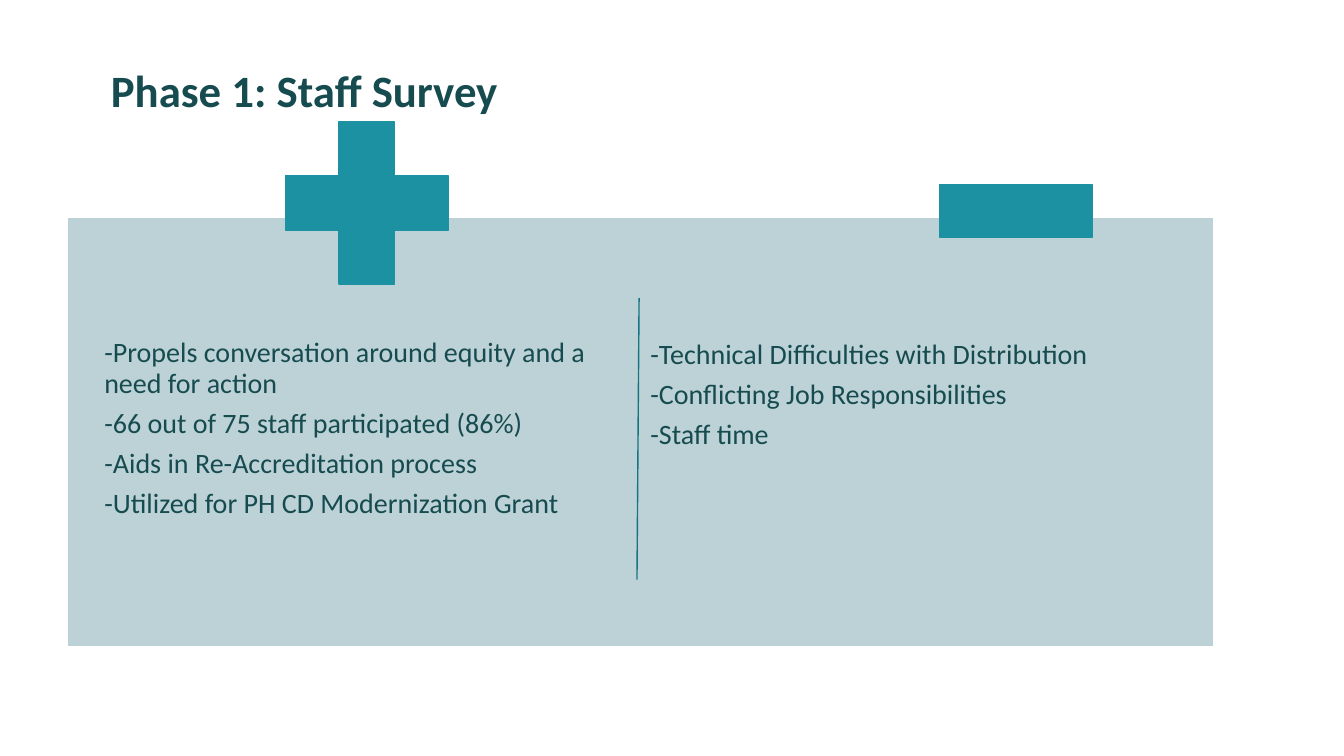
"""Build the staff survey slide weighing positives against negatives."""
import pptx
import pptx.dml.color
import pptx.enum.shapes
import pptx.enum.text
import pptx.oxml
import pptx.oxml.ns
import pptx.util

Pt = pptx.util.Pt
RGBColor = pptx.dml.color.RGBColor
Shape = pptx.enum.shapes.MSO_SHAPE
Text = pptx.enum.text

COLORS = {
    "text": "164B4F",
    "panel": "BDD2D7",
    "panel line": "FFFFFF",
    "sign": "1B91A1",
    "divider": "167481",
}
POSITIVES = [
    "-Propels conversation around equity and a need for action",
    "-66 out of 75 staff participated (86%)",
    "-Aids in Re-Accreditation process",
    "-Utilized for PH CD Modernization Grant",
]
NEGATIVES = [
    "-Technical Difficulties with Distribution",
    "-Conflicting Job Responsibilities",
    "-Staff time",
]


def place(shape, left, top, width, height):
    box = {"left": left, "top": top, "width": width, "height": height}
    for name, value in box.items():
        setattr(shape, name, Pt(value))


def format_text(paragraph, size, bold, space_after):
    paragraph_format = {
        "alignment": Text.PP_ALIGN.LEFT,
        "line_spacing": 0.9,
        "space_before": Pt(0),
        "space_after": Pt(space_after),
    }
    for name, value in paragraph_format.items():
        setattr(paragraph, name, value)
    font_format = {"name": "Calibri", "size": Pt(size), "bold": bold}
    for run in paragraph.runs:
        for name, value in font_format.items():
            setattr(run.font, name, value)
        run.font.color.rgb = RGBColor.from_string(COLORS["text"])


presentation = pptx.Presentation()
presentation.slide_width = Pt(960)
presentation.slide_height = Pt(540)
slide = presentation.slides.add_slide(presentation.slide_layouts[3])
for placeholder in list(slide.placeholders):
    if placeholder.placeholder_format.idx > 2:
        placeholder.element.getparent().remove(placeholder.element)

title = slide.shapes.title
place(title, 72, 3, 690, 84)
title.text_frame.text = "Phase 1: Staff Survey"
title.text_frame.vertical_anchor = Text.MSO_ANCHOR.BOTTOM
title.text_frame.auto_size = Text.MSO_AUTO_SIZE.NONE
format_text(title.text_frame.paragraphs[0], 32, True, 0)

columns = [
    (1, POSITIVES, (71.5, 239, 370, 193)),
    (2, NEGATIVES, (461.5, 239.8, 396, 203)),
]
frame_format = {
    "margin_left": Pt(3),
    "margin_right": Pt(3),
    "margin_top": Pt(3),
    "margin_bottom": Pt(3),
    "vertical_anchor": Text.MSO_ANCHOR.TOP,
    "word_wrap": True,
    "auto_size": Text.MSO_AUTO_SIZE.NONE,
}
for index, lines, box in columns:
    body = slide.placeholders[index]
    place(body, *box)
    frame = body.text_frame
    for name, value in frame_format.items():
        setattr(frame, name, value)
    frame.text = "\n".join(lines)
    for paragraph in frame.paragraphs:
        properties = paragraph._p.get_or_add_pPr()
        properties.set("marL", "0")
        properties.set("indent", "0")
        properties.append(pptx.oxml.parse_xml(f"<a:buNone {pptx.oxml.ns.nsdecls('a')}/>"))
        format_text(paragraph, 20, False, 7)

blocks = {}
for name, kind, box, fill, line in [
    ("panel", Shape.RECTANGLE, (47.8, 155, 819, 307), "panel", "panel line"),
    ("plus", Shape.CROSS, (204, 87, 116, 116), "sign", "sign"),
    ("minus", Shape.RECTANGLE, (671, 132, 109.5, 37.5), "sign", "sign"),
]:
    shape = slide.shapes.add_shape(kind, *map(Pt, box))
    shape.shadow.inherit = False
    shape.fill.solid()
    shape.fill.fore_color.rgb = RGBColor.from_string(COLORS[fill])
    shape.line.color.rgb = RGBColor.from_string(COLORS[line])
    shape.line.width = Pt(1)
    blocks[name] = shape
blocks["plus"].adjustments[0] = 0.33
title.element.addprevious(blocks["panel"].element)

divider = slide.shapes.add_connector(
    pptx.enum.shapes.MSO_CONNECTOR.STRAIGHT, Pt(456.5), Pt(213), Pt(455), Pt(414)
)
divider.line.color.rgb = RGBColor.from_string(COLORS["divider"])
divider.line.width = Pt(1)
divider.element.spPr.append(
    pptx.oxml.parse_xml(f"<a:effectLst {pptx.oxml.ns.nsdecls('a')}/>")
)

presentation.save("out.pptx")
